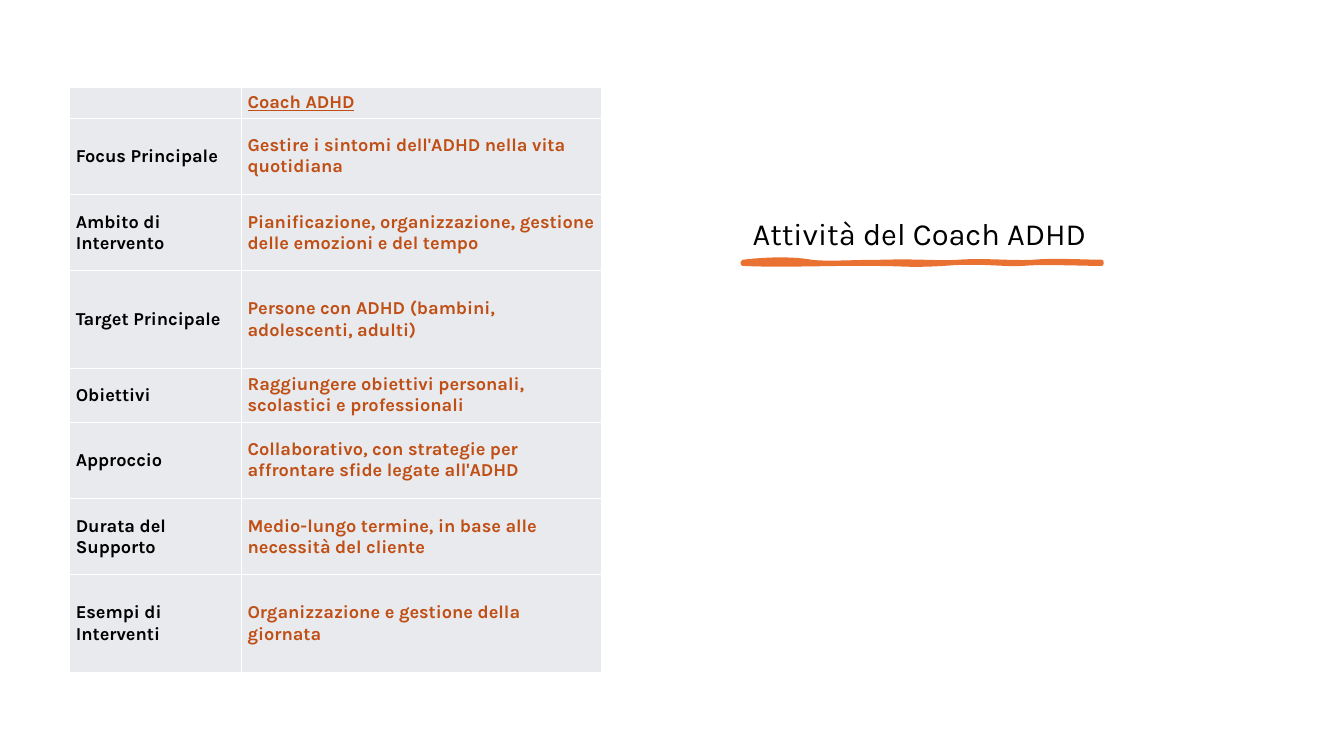
from lxml.etree import SubElement as Sub
from pptx import Presentation
from pptx.dml.color import RGBColor
from pptx.enum.text import MSO_ANCHOR
from pptx.oxml.ns import qn
from pptx.util import Cm, Pt

FONT = "Karla"
BLACK, WHITE, GRAY = "000000", "FFFFFF", "E8EAED"
RUST, ORANGE = "C04F15", "E97132"

ROWS = [
    (0.79, "", "Coach ADHD"),
    (1.92, "Focus Principale", "Gestire i sintomi dell'ADHD nella vita quotidiana"),
    (1.92, "Ambito di Intervento",
     "Pianificazione, organizzazione, gestione delle emozioni e del tempo"),
    (2.46, "Target Principale", "Persone con ADHD (bambini, adolescenti, adulti)"),
    (1.36, "Obiettivi", "Raggiungere obiettivi personali, scolastici e professionali"),
    (1.92, "Approccio",
     "Collaborativo, con strategie per affrontare sfide legate all'ADHD"),
    (1.92, "Durata del Supporto",
     "Medio-lungo termine, in base alle necessità del cliente"),
    (2.46, "Esempi di Interventi", "Organizzazione e gestione della giornata"),
]

TOP = [
    ((0, 0), (0.66, -0.08), (1.3, -0.08), (1.73, 0)),
    ((1.73, 0), (2.16, 0.05), (2.72, 0), (3.53, 0)),
    ((3.53, 0), (4.34, -0.03), (4.83, 0.03), (5.44, 0)),
    ((5.44, 0), (6.05, -0.05), (6.81, 0.03), (7.32, 0)),
    ((7.32, 0), (7.82, -0.05), (8.66, 0), (9.04, 0)),
]
BASE = [
    ((9.04, 0.05), (8.59, 0.05), (7.47, 0), (7.06, 0.05)),
    ((7.06, 0.05), (6.63, 0.08), (5.94, -0.03), (5.05, 0.05)),
    ((5.05, 0.05), (4.19, 0.1), (4.06, 0.05), (3.25, 0.05)),
    ((3.25, 0.05), (2.44, 0.03), (1.04, 0.1), (0, 0.05)),
]


def color(code):
    return RGBColor.from_string(code)


def style(par, size, code, bold=False, line=False):
    for run in par.runs:
        font = run.font
        font.name, font.size = FONT, Pt(size)
        font.bold, font.underline = bold, line
        font.color.rgb = color(code)


def border(cell):
    props = cell._tc.get_or_add_tcPr()
    for side in ("a:lnL", "a:lnR", "a:lnT", "a:lnB"):
        edge = Sub(props, qn(side), w=str(Pt(1)))
        Sub(Sub(edge, qn("a:solidFill")), qn("a:srgbClr"), val=WHITE)


def fill_cell(cell, text, code, line):
    border(cell)
    cell.fill.solid()
    cell.fill.fore_color.rgb = color(GRAY)
    cell.vertical_anchor = MSO_ANCHOR.MIDDLE
    cell.margin_left = cell.margin_right = Cm(0.15)
    cell.margin_top = cell.margin_bottom = Cm(0.08)
    par = cell.text_frame.paragraphs[0]
    if text:
        par.text = text
        style(par, 13, code, True, line)
    else:
        Sub(par._p, qn("a:endParaRPr"), sz="1300")


def add_grid(slide, left, top, widths):
    high = sum(row[0] for row in ROWS)
    grid = slide.shapes.add_table(
        len(ROWS), len(widths), Cm(left), Cm(top), Cm(sum(widths)), Cm(high)).table
    grid.first_row = grid.horz_banding = False
    for col, width in zip(grid.columns, widths):
        col.width = Cm(width)
    for i, (height, label, text) in enumerate(ROWS):
        grid.rows[i].height = Cm(height)
        fill_cell(grid.cell(i, 0), label, BLACK, False)
        fill_cell(grid.cell(i, 1), text, RUST, i == 0)


def add_title(slide, left, top, width, height, text):
    box = slide.shapes.add_textbox(Cm(left), Cm(top), Cm(width), Cm(height))
    frame = box.text_frame
    frame.word_wrap = True
    frame.text = text
    par = frame.paragraphs[0]
    par.line_spacing = 0.9
    par.space_after = Pt(6)
    style(par, 22, BLACK)


def curve(points, steps=12):
    for i in range(steps + 1):
        t = i / steps
        u = 1 - t
        parts = (u ** 3, 3 * u * u * t, 3 * u * t * t, t ** 3)
        yield tuple(sum(k * p[axis] for k, p in zip(parts, points)) for axis in (0, 1))


def add_stroke(slide, left, top):
    dots = [(Cm(left + x), Cm(top + y)) for arc in TOP + BASE for x, y in curve(arc)]
    pen = slide.shapes.build_freeform(*dots[0])
    pen.add_line_segments(dots[1:], close=True)
    shape = pen.convert_to_shape()
    shape.shadow.inherit = False
    shape.fill.solid()
    shape.fill.fore_color.rgb = color(ORANGE)
    shape.line.color.rgb = color(ORANGE)
    shape.line.width = Pt(3)


def main():
    deck = Presentation()
    deck.slide_width, deck.slide_height = Cm(33.87), Cm(19.05)
    slide = deck.slides.add_slide(deck.slide_layouts[6])
    add_stroke(slide, 18.72, 6.6)
    add_title(slide, 18.72, 5.38, 13.39, 9.86, "Attività del Coach ADHD")
    add_grid(slide, 1.76, 2.19, (4.33, 9.06))
    deck.save("out.pptx")


if __name__ == "__main__":
    main()
